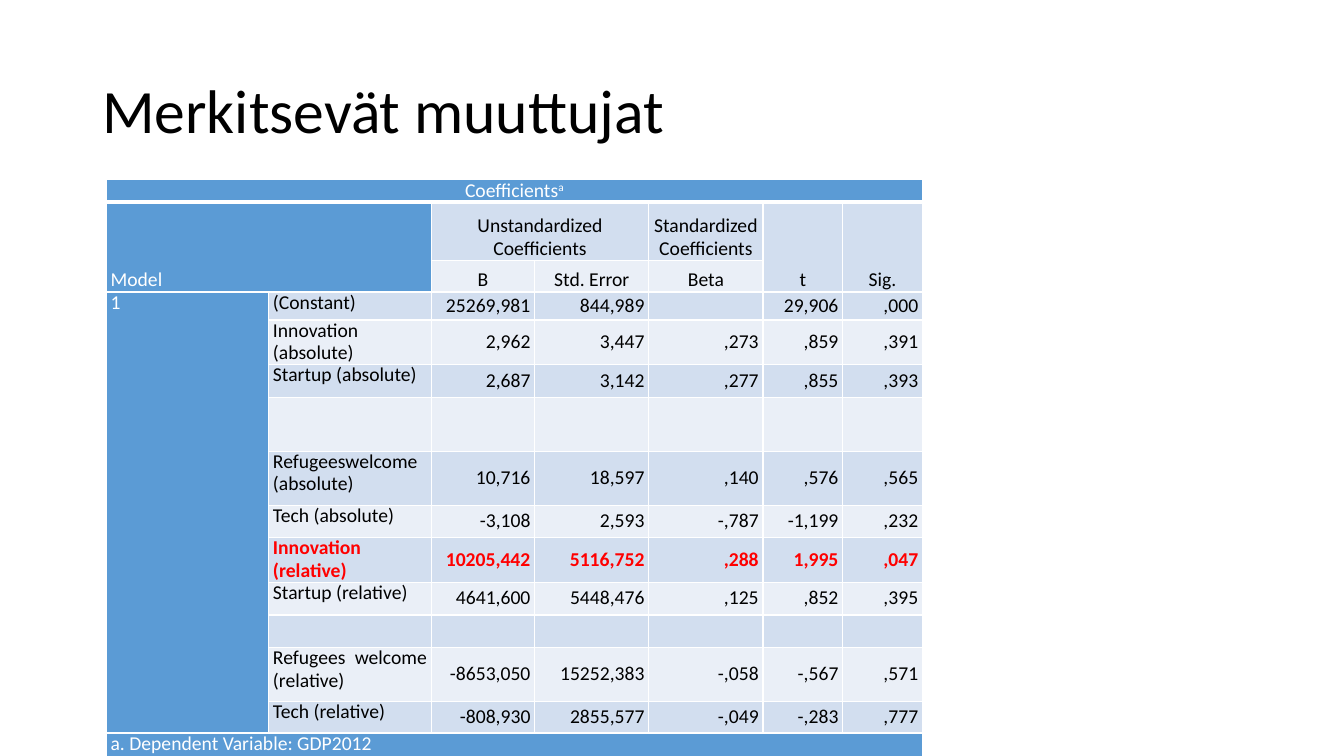
from lxml.etree import SubElement
from pptx import Presentation
from pptx.dml.color import RGBColor
from pptx.enum.text import MSO_ANCHOR as Anchor, PP_ALIGN as Align
from pptx.oxml.ns import qn
from pptx.util import Pt

FONT = "Calibri"
BLACK, WHITE, RED = "000000", "FFFFFF", "FF0000"
BLUE, BANDS = "5B9BD5", ("EAEFF7", "D2DEEF")

TITLE = "Merkitsevät muuttujat"
CAPTION, CAPTION_MARK = "Coefficients", "a"
FOOTNOTE = "a. Dependent Variable: GDP2012"
# (row, column, row span, column span, text)
HEADINGS = [
    (1, 2, 1, 2, "Unstandardized Coefficients"),
    (1, 4, 1, 1, "Standardized Coefficients"),
    (1, 5, 2, 1, "t"),
    (1, 6, 2, 1, "Sig."),
    (2, 2, 1, 1, "B"),
    (2, 3, 1, 1, "Std. Error"),
    (2, 4, 1, 1, "Beta"),
]
BLANK = ("",) * 6
VARIABLES = [
    ("(Constant)", "25269,981", "844,989", "", "29,906", ",000"),
    ("Innovation (absolute)", "2,962", "3,447", ",273", ",859", ",391"),
    ("Startup (absolute)", "2,687", "3,142", ",277", ",855", ",393"),
    BLANK,
    ("Refugeeswelcome (absolute)", "10,716", "18,597", ",140", ",576", ",565"),
    ("Tech (absolute)", "-3,108", "2,593", "-,787", "-1,199", ",232"),
    ("Innovation (relative)", "10205,442", "5116,752", ",288", "1,995", ",047"),
    ("Startup (relative)", "4641,600", "5448,476", ",125", ",852", ",395"),
    BLANK,
    ("Refugees welcome (relative)", "-8653,050", "15252,383", "-,058", "-,567", ",571"),
    ("Tech (relative)", "-808,930", "2855,577", "-,049", "-,283", ",777"),
]
SIGNIFICANT = "Innovation (relative)"
FIRST_VARIABLE = 3

COLUMN_WIDTHS = [116, 116, 74, 81.5, 81.5, 57, 57]
ROW_HEIGHTS = [15.3, 41.6, 22.5, 20, 23.2, 23.2, 38.6, 38.6,
               23.2, 23.2, 23.2, 23.2, 38.6, 22.5, 20]
TABLE_LEFT, TABLE_TOP = 76, 128.5
CELL_INDENT = 3


def color(hex_code):
    return RGBColor.from_string(hex_code)


def write(frame, text, size=14, ink=BLACK, bold=False, align=Align.LEFT, spacing=Pt(16)):
    """Fill the first paragraph of a text frame and return its run."""
    paragraph = frame.paragraphs[0]
    paragraph.alignment = align
    paragraph.line_spacing = spacing
    if not text:
        SubElement(paragraph._p, qn("a:endParaRPr"), sz=str(size * 100))
        return None
    run = paragraph.add_run()
    run.text = text
    run.font.name, run.font.size, run.font.bold = FONT, Pt(size), bold
    run.font.color.rgb = color(ink)
    return run


def set_borders(cell, bottom=1):
    properties = cell._tc.get_or_add_tcPr()
    for position, (side, width) in enumerate(zip("LRTB", (1, 1, 1, bottom))):
        line = properties.makeelement(qn(f"a:ln{side}"), {"w": str(Pt(width))})
        SubElement(SubElement(line, qn("a:solidFill")), qn("a:srgbClr"), val=WHITE)
        properties.insert(position, line)


def put(row, column, text, rows=1, columns=1, anchor=Anchor.TOP, **text_format):
    """Write one table cell, merged over the given span."""
    cell = coefficients.cell(row, column)
    if rows * columns > 1:
        cell.merge(coefficients.cell(row + rows - 1, column + columns - 1))
    cell.vertical_anchor = anchor
    run = write(cell.text_frame, text, **text_format)
    indents = cell.text_frame.paragraphs[0]._p.get_or_add_pPr()
    for side in ("marL", "marR"):
        indents.set(side, str(Pt(CELL_INDENT)))
    return run


deck = Presentation()
deck.slide_width, deck.slide_height = Pt(960), Pt(540)
slide = deck.slides.add_slide(deck.slide_layouts[6])

title = slide.shapes.add_textbox(Pt(66), Pt(28.75), Pt(828), Pt(104.4)).text_frame
title.word_wrap = True
title.vertical_anchor = Anchor.MIDDLE
write(title, TITLE, size=44, spacing=0.9)

coefficients = slide.shapes.add_table(
    len(ROW_HEIGHTS), len(COLUMN_WIDTHS), Pt(TABLE_LEFT), Pt(TABLE_TOP),
    Pt(sum(COLUMN_WIDTHS)), Pt(sum(ROW_HEIGHTS))).table
for column, width in zip(coefficients.columns, COLUMN_WIDTHS):
    column.width = Pt(width)
for row, height in zip(coefficients.rows, ROW_HEIGHTS):
    row.height = Pt(height)

last_row = len(ROW_HEIGHTS) - 1
for r in range(len(ROW_HEIGHTS)):
    for c in range(len(COLUMN_WIDTHS)):
        cell = coefficients.cell(r, c)
        cell.margin_left = cell.margin_right = cell.margin_top = cell.margin_bottom = 0
        is_header = r in (0, last_row) or c == 0 or (c == 1 and r < FIRST_VARIABLE)
        cell.fill.solid()
        cell.fill.fore_color.rgb = color(BLUE if is_header else BANDS[r % 2])
        set_borders(cell, bottom=3 if r == 0 else 1)

put(0, 0, CAPTION, columns=7, anchor=Anchor.MIDDLE, ink=WHITE, align=Align.CENTER)
mark = write(coefficients.cell(0, 0).text_frame, CAPTION_MARK, ink=WHITE, align=Align.CENTER)
mark.font._element.set("baseline", "30000")
put(1, 0, "Model", rows=2, columns=2, anchor=Anchor.BOTTOM, ink=WHITE, align=Align.JUSTIFY)
put(FIRST_VARIABLE, 0, "1", rows=len(VARIABLES), ink=WHITE, align=Align.JUSTIFY)
put(last_row, 0, FOOTNOTE, columns=7, ink=WHITE, align=Align.JUSTIFY)

for r, c, rows, columns, heading in HEADINGS:
    put(r, c, heading, rows, columns, Anchor.BOTTOM, align=Align.CENTER)

for r, (variable, *values) in enumerate(VARIABLES, FIRST_VARIABLE):
    significant = variable == SIGNIFICANT
    emphasis = {"ink": RED if significant else BLACK, "bold": significant}
    put(r, 1, variable, align=Align.JUSTIFY, **emphasis)
    for c, value in enumerate(values, 2):
        put(r, c, value, anchor=Anchor.MIDDLE, align=Align.RIGHT, **emphasis)

deck.save("out.pptx")
